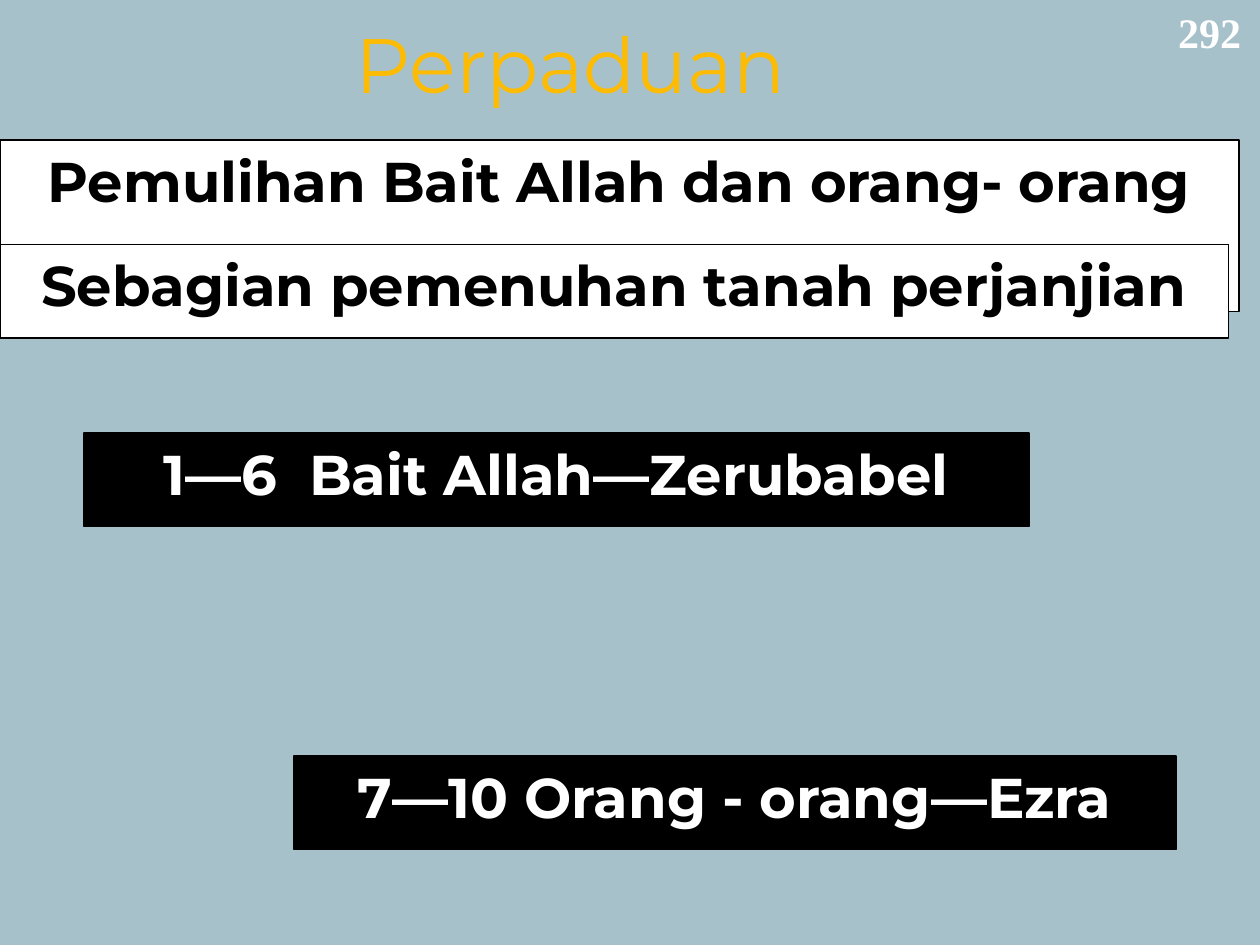
"""Build the "Perpaduan" slide with its banner boxes."""
from dataclasses import dataclass

import lxml.etree
import pptx
import pptx.dml.color
import pptx.enum.shapes
import pptx.enum.text
import pptx.oxml
import pptx.oxml.ns
import pptx.util

Pt = pptx.util.Pt
COLORS = {
    "background": "A7C1CB",
    "gold": "FDBC03",
    "black": "000000",
    "white": "FFFFFF",
}
BANNER_FONT = {"name": "Montserrat", "size": Pt(32), "bold": True}
TITLE_FONT = {"name": "Montserrat", "size": Pt(44), "bold": False}
NUMBER_FONT = {"name": "Times New Roman", "size": Pt(24), "bold": True}
BANNER_HEIGHT = 53.5


@dataclass
class Banner:
    text: str
    left: float
    top: float
    width: float
    fill: str
    ink: str
    height: float = BANNER_HEIGHT


BANNERS = [
    Banner("1—6  Bait Allah—Zerubabel", 48, 247.5, 540, "black", "white"),
    Banner("Pemulihan Bait Allah dan orang- orang", 0, 80, 708, "white", "black", 98),
    Banner("7—10 Orang - orang—Ezra", 168, 432, 504, "black", "white"),
    Banner("Sebagian pemenuhan tanah perjanjian", 0, 139.75, 702, "white", "black"),
]


def color(name: str) -> pptx.dml.color.RGBColor:
    """Return the named palette colour."""
    return pptx.dml.color.RGBColor.from_string(COLORS[name])


def write(box, text: str, font: dict, ink: str, anchor: str = "TOP"):
    """Put one centred, formatted span of text in a box and return the span."""
    frame = box.text_frame
    frame.word_wrap = True
    frame.auto_size = pptx.enum.text.MSO_AUTO_SIZE.NONE
    frame.vertical_anchor = pptx.enum.text.MSO_ANCHOR[anchor]
    para = frame.paragraphs[0]
    para.alignment = pptx.enum.text.PP_ALIGN.CENTER
    span = para.add_run()
    span.text = text
    for key, value in font.items():
        setattr(span.font, key, value)
    span.font.color.rgb = color(ink)
    return span


def add_text_shadow(span) -> None:
    """Give a span a soft shadow falling to the lower right."""
    effects = pptx.oxml.parse_xml(
        f'<a:effectLst {pptx.oxml.ns.nsdecls("a")}>'
        '<a:outerShdw blurRad="38100" dist="38100" dir="2700000" algn="tl">'
        f'<a:srgbClr val="{COLORS["black"]}"><a:alpha val="43000"/></a:srgbClr>'
        "</a:outerShdw></a:effectLst>"
    )
    properties = span.font.fill._xPr
    properties.find(pptx.oxml.ns.qn("a:latin")).addprevious(effects)


def add_title(page, text: str) -> None:
    """Place and format the title placeholder."""
    title = page.shapes.title
    place = {"left": Pt(156), "top": Pt(12), "width": Pt(340), "height": Pt(54)}
    for key, value in place.items():
        setattr(title, key, value)
    add_text_shadow(write(title, text, TITLE_FONT, "gold", "BOTTOM"))


def add_banner(page, banner: Banner) -> None:
    """Draw one outlined rectangle with its text."""
    box = page.shapes.add_shape(
        pptx.enum.shapes.MSO_SHAPE.RECTANGLE,
        Pt(banner.left), Pt(banner.top), Pt(banner.width), Pt(banner.height),
    )
    box.shadow.inherit = False
    box.fill.solid()
    box.fill.fore_color.rgb = color(banner.fill)
    box.line.color.rgb = color("black")
    box.line.width = Pt(0.75)
    write(box, banner.text, BANNER_FONT, banner.ink)


def main() -> None:
    """Assemble and save the deck."""
    deck = pptx.Presentation()
    deck.slide_width, deck.slide_height = Pt(720), Pt(540)
    page = deck.slides.add_slide(deck.slide_layouts[5])
    page.background.fill.solid()
    page.background.fill.fore_color.rgb = color("background")
    add_title(page, "Perpaduan")
    number = page.shapes.add_textbox(Pt(662.5), Pt(0), Pt(57.5), Pt(36))
    write(number, "292", NUMBER_FONT, "white")
    for banner in BANNERS:
        add_banner(page, banner)
    deck.save("out.pptx")


if __name__ == "__main__":
    main()
